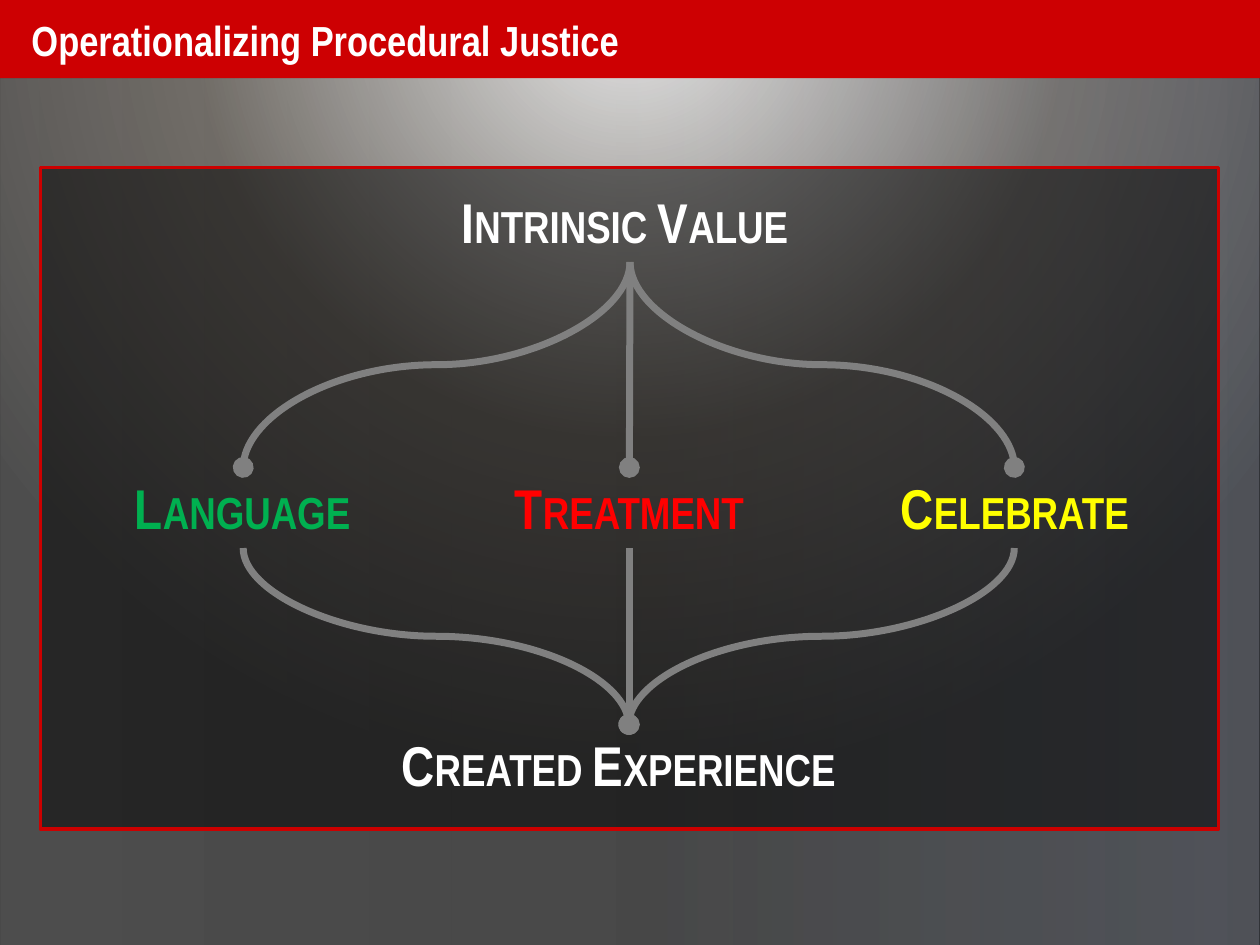
from lxml import etree
from pptx import Presentation
from pptx import oxml
from pptx.dml import color
from pptx.enum import shapes, text
from pptx.oxml import ns
from pptx.util import Inches, Pt

COLORS = {
    "white": "FFFFFF", "black": "000000", "banner": "CD0002", "frame": "CC0000",
    "language": "00B050", "treatment": "FF0000", "celebrate": "FFFF00", "connector": "808080",
}
RGB = {name: color.RGBColor.from_string(value) for name, value in COLORS.items()}
FONT = "Arial Narrow"


def set_gradient(solid, stops, direction):
    stop_xml = "".join(
        f'<a:gs pos="{place * 1000}"><a:srgbClr val="{value}">'
        f'<a:alpha val="{opacity * 1000}"/></a:srgbClr></a:gs>'
        for place, value, opacity in stops
    )
    gradient = oxml.parse_xml(
        f'<a:gradFill {ns.nsdecls("a")} rotWithShape="1">'
        f"<a:gsLst>{stop_xml}</a:gsLst>{direction}</a:gradFill>"
    )
    solid.getparent().replace(solid, gradient)


def style_connector(connector):
    connector.line.color.rgb = RGB["connector"]
    connector.line.width = Pt(4)
    line = connector._element.spPr.find(ns.qn("a:ln"))
    etree.SubElement(line, ns.qn("a:tailEnd"), type="oval")
    etree.SubElement(connector._element.spPr, ns.qn("a:effectLst"))


deck = Presentation()
deck.slide_width = Inches(10)
deck.slide_height = Inches(7.5)
page = deck.slides.add_slide(deck.slide_layouts[6])

page.background.fill.solid()
page.background.fill.fore_color.rgb = RGB["black"]
set_gradient(
    page._element.xpath("./p:cSld/p:bg//a:solidFill")[0],
    [(0, "FFFFFF", 100), (56, "3D362D", 100), (100, "000000", 100)],
    '<a:path path="circle"><a:fillToRect l="50000" t="-80000" r="50000" b="180000"/></a:path>',
)

panels = {}
for role, left, top, width, height, fill in [
    ("sheen", 0, 0.62, 10, 6.88, "white"),
    ("banner", 0, 0, 10, 0.62, "banner"),
    ("frame", 0.32, 1.33, 9.35, 5.25, "black"),
]:
    panel = page.shapes.add_shape(
        shapes.MSO_SHAPE.RECTANGLE, Inches(left), Inches(top), Inches(width), Inches(height)
    )
    panel.shadow.inherit = False
    panel.fill.solid()
    panel.fill.fore_color.rgb = RGB[fill]
    panel.line.fill.background()
    panels[role] = panel

set_gradient(
    panels["sheen"]._element.spPr.find(ns.qn("a:solidFill")),
    [(0, "BFBFBF", 40), (50, "BFBFBF", 37), (100, "E0E9FB", 35)],
    '<a:lin ang="0" scaled="0"/>',
)

frame = panels["frame"]
frame_color = frame._element.spPr.find(ns.qn("a:solidFill"))[0]
etree.SubElement(frame_color, ns.qn("a:alpha"), val="50000")
frame.line.color.rgb = RGB["frame"]
frame.line.width = Pt(2)

title = panels["banner"].text_frame
title.word_wrap = False
title.margin_left = Inches(0.25)
title.margin_top = Inches(0.06)
title.vertical_anchor = text.MSO_ANCHOR.MIDDLE
para = title.paragraphs[0]
para.alignment = text.PP_ALIGN.LEFT
span = para.add_run()
span.text = "Operationalizing Procedural Justice"
span.font.name = FONT
span.font.size = Pt(24)
span.font.bold = True
span.font.color.rgb = RGB["white"]

labels = {}
for words, left, top, width, fill, wrap, right_margin in [
    ("Intrinsic Value", 3.54, 1.44, 2.92, "white", False, 0.18),
    ("Language", 0.58, 3.71, 2.69, "language", True, 0.1),
    ("Treatment", 3.65, 3.71, 2.69, "treatment", True, 0.1),
    ("Celebrate", 6.71, 3.71, 2.69, "celebrate", True, 0.1),
    ("Created Experience", 3.04, 5.75, 3.91, "white", False, 0.27),
]:
    box = page.shapes.add_textbox(Inches(left), Inches(top), Inches(width), Inches(0.64))
    box.text_frame.word_wrap = wrap
    box.text_frame.auto_size = text.MSO_AUTO_SIZE.SHAPE_TO_FIT_TEXT
    box.text_frame.margin_right = Inches(right_margin)
    para = box.text_frame.paragraphs[0]
    para.alignment = text.PP_ALIGN.CENTER
    span = para.add_run()
    span.text = words
    span.font.name = FONT
    span.font.size = Pt(32)
    span.font.bold = True
    span.font.color.rgb = RGB[fill]
    span.font._element.set("cap", "small")
    labels[words] = box

for start_x, start_y, end_x, end_y in [
    (5, 2.08, 1.93, 3.71),
    (5, 2.08, 8.05, 3.71),
    (1.93, 4.35, 4.99, 5.75),
    (8.05, 4.35, 4.99, 5.75),
]:
    middle_x, middle_y = (start_x + end_x) / 2, (start_y + end_y) / 2
    half_run, half_drop = abs(end_x - start_x) / 2, (end_y - start_y) / 2
    side = 1 if end_x > start_x else -1
    curve = page.shapes.add_connector(
        shapes.MSO_CONNECTOR.CURVE,
        Inches(middle_x + side * half_drop), Inches(middle_y - half_run),
        Inches(middle_x - side * half_drop), Inches(middle_y + half_run),
    )
    curve._element.spPr.xfrm.set("rot", "16200000" if side > 0 else "5400000")
    style_connector(curve)

for upper, lower, start_x, start_y, end_y in [
    ("Intrinsic Value", "Treatment", 5, 2.08, 3.71),
    ("Treatment", "Created Experience", 4.99, 4.35, 5.75),
]:
    straight = page.shapes.add_connector(
        shapes.MSO_CONNECTOR.STRAIGHT,
        Inches(start_x), Inches(start_y), Inches(4.99), Inches(end_y),
    )
    straight.begin_connect(labels[upper], 2)
    straight.end_connect(labels[lower], 0)
    style_connector(straight)

deck.save("out.pptx")
